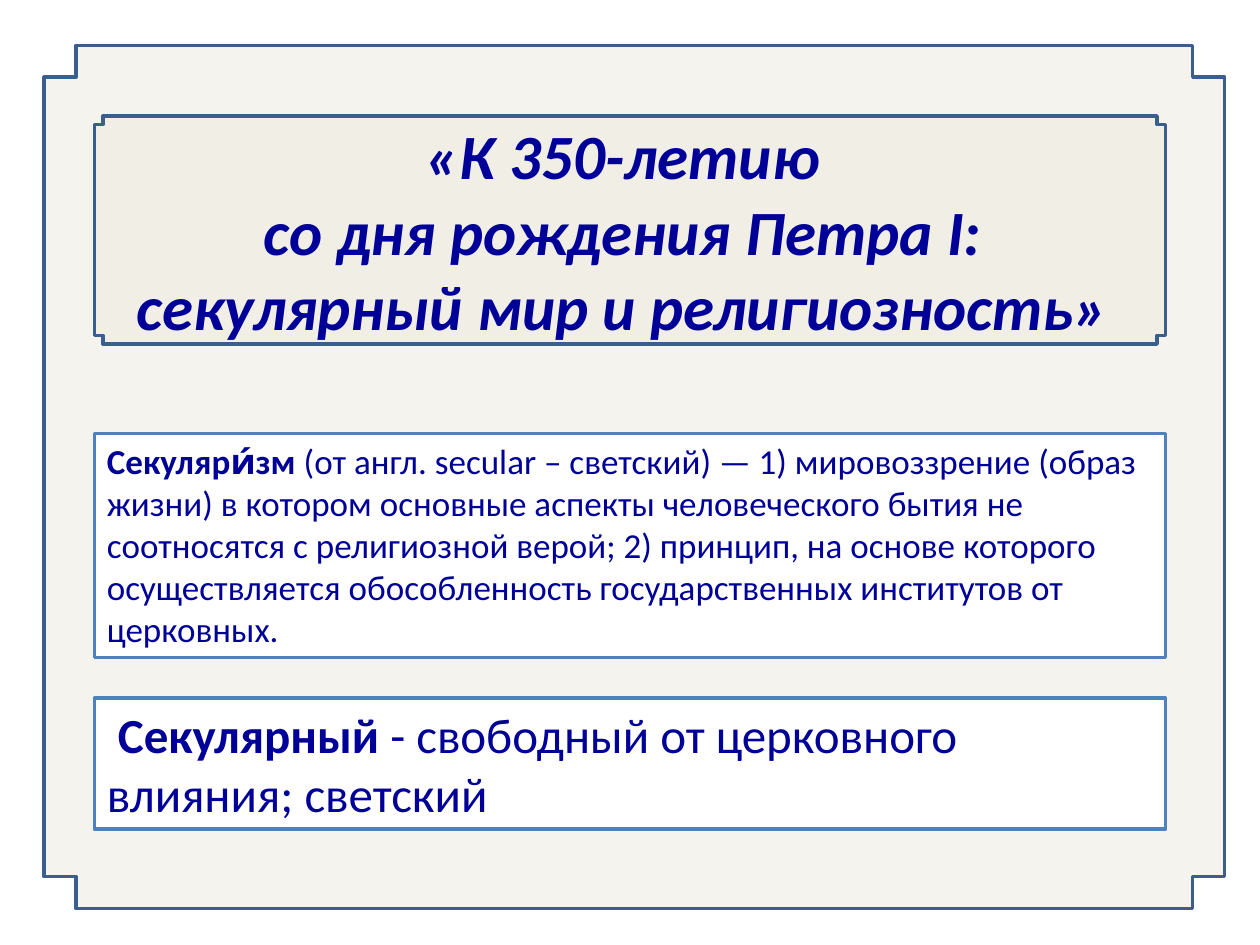
from pptx import Presentation
from pptx.dml.color import RGBColor
from pptx.enum import shapes, text
from pptx.oxml.ns import qn
from pptx.util import Inches, Pt
from lxml import etree

HUES = {"text": "000099", "cream": "EEECE1", "edge": "3A5F8C",
        "white": "FFFFFF", "blue": "4F81BD"}
LEFT, WIDTH = 0.75, 8.5


def tint(name):
    return RGBColor.from_string(HUES[name])


def write(par, words, size=20, bold=False, italic=False):
    """Add one formatted run to a paragraph."""
    run = par.add_run()
    run.text = words
    font = run.font
    font.name, font.size = "Calibri", Pt(size)
    font.bold, font.italic = bold, italic
    font.color.rgb = tint("text")


prs = Presentation()
prs.slide_width, prs.slide_height = Inches(10), Inches(7.5)
slide = prs.slides.add_slide(prs.slide_layouts[5])

# Translucent frames with notched corners
for box in [(0.35, 0.36, 9.37, 6.85), (LEFT, 0.92, WIDTH, 1.81)]:
    frame = slide.shapes.add_shape(shapes.MSO_SHAPE.CROSS, *map(Inches, box))
    frame.adjustments[0] = 0.037
    frame.shadow.inherit = False
    frame.fill.solid()
    frame.fill.fore_color.rgb = tint("cream")
    color = frame.fill._xPr.find(qn("a:solidFill"))[0]
    etree.SubElement(color, qn("a:alpha"), val="60000")
    frame.line.color.rgb = tint("edge")
    frame.line.width = Pt(2)

# Title, brought in front of its frame
title = slide.shapes.title
title.left, title.top = Inches(LEFT), Inches(0.92)
title.width, title.height = Inches(WIDTH), Inches(1.81)
frame._element.addnext(title._element)
body = title.text_frame
body.word_wrap = True
body.auto_size = text.MSO_AUTO_SIZE.NONE
body.vertical_anchor = text.MSO_ANCHOR.MIDDLE
lines = ["«К 350-летию ", "со дня рождения Петра I: ",
         "секулярный мир и религиозность» "]
par = body.paragraphs[0]
par.alignment = text.PP_ALIGN.CENTER
for i, line in enumerate(lines):
    if i:
        par.add_line_break()
    write(par, line, size=36, bold=True, italic=True)

# Definitions: top, height, text size, term, meaning
terms = [
    (3.44, 1.78, 20, "Секуляри́зм\u00a0",
     "(от англ. secular – светский) — 1)\u00a0мировоззрение\u00a0(образ жизни) "
     "в котором основные аспекты человеческого бытия не соотносятся "
     "с\u00a0религиозной верой; 2) принцип, на основе которого осуществляется "
     "обособленность государственных институтов от церковных."),
    (5.54, 1.04, 28, " Секулярный ",
     "- свободный от церковного влияния; светский"),
]
for top, high, size, term, sense in terms:
    card = slide.shapes.add_shape(
        shapes.MSO_SHAPE.RECTANGLE,
        *map(Inches, (LEFT, top, WIDTH, high)))
    card.shadow.inherit = False
    card.fill.solid()
    card.fill.fore_color.rgb = tint("white")
    card.line.color.rgb = tint("blue")
    card.line.width = Pt(2)
    body = card.text_frame
    body.word_wrap = True
    body.auto_size = text.MSO_AUTO_SIZE.SHAPE_TO_FIT_TEXT
    body.vertical_anchor = text.MSO_ANCHOR.TOP
    par = body.paragraphs[0]
    par.alignment = text.PP_ALIGN.LEFT
    write(par, term, size=size, bold=True)
    write(par, sense, size=size)

prs.save("out.pptx")
